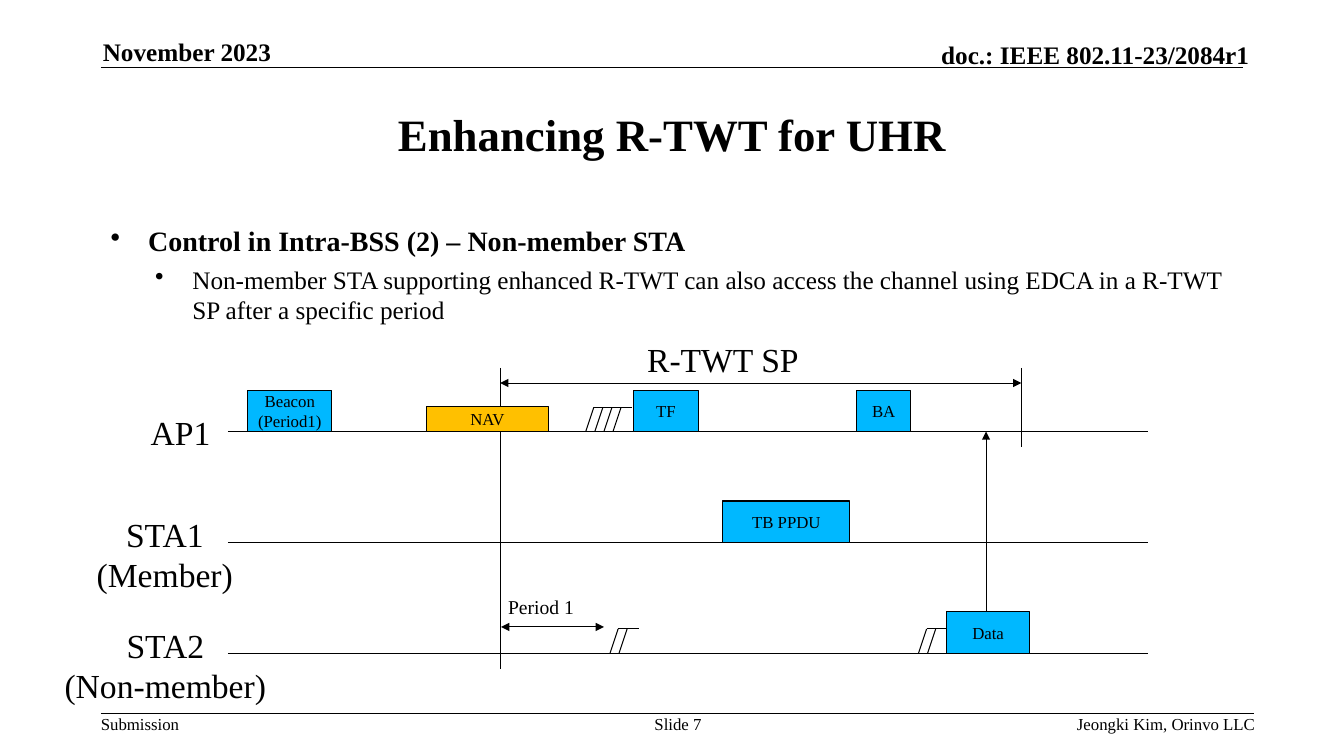
import pptx
import pptx.util
import pptx.dml.color
import pptx.enum.shapes
import pptx.enum.text
import pptx.oxml
import pptx.oxml.ns

PX = 9144  # EMU per px, 100 px to the inch
FONT = "Times New Roman"
BLACK = pptx.dml.color.RGBColor(0x00, 0x00, 0x00)
BLUE = pptx.dml.color.RGBColor(0x00, 0xB8, 0xFF)
AMBER = pptx.dml.color.RGBColor(0xFF, 0xC0, 0x00)
LEFT, CENTER, RIGHT = (pptx.enum.text.PP_ALIGN.LEFT, pptx.enum.text.PP_ALIGN.CENTER,
                       pptx.enum.text.PP_ALIGN.RIGHT)
TOP, MIDDLE, BOTTOM = (pptx.enum.text.MSO_ANCHOR.TOP, pptx.enum.text.MSO_ANCHOR.MIDDLE,
                       pptx.enum.text.MSO_ANCHOR.BOTTOM)


def px(*lengths):
    return [pptx.util.Emu(length * PX) for length in lengths]


def add_xml(parent, tag, **attributes):
    element = pptx.oxml.parse_xml(f"<a:{tag} {pptx.oxml.ns.nsdecls('a')}/>")
    for name, value in attributes.items():
        element.set(name, value)
    parent.append(element)


def write(shape, lines, size, align=LEFT, anchor=TOP, bold=False, wrap=True):
    frame = shape.text_frame
    frame.text = "\n".join(lines)
    frame.word_wrap = wrap
    frame.vertical_anchor = anchor
    for paragraph in frame.paragraphs:
        paragraph.alignment = align
        paragraph.font.name = FONT
        paragraph.font.size = pptx.util.Pt(size)
        paragraph.font.bold = bold
        paragraph.font.color.rgb = BLACK
    return frame


def add_text(slide, box, lines, size, inset=True, **style):
    shape = slide.shapes.add_textbox(*px(*box))
    frame = write(shape, lines, size, **style)
    if not inset:
        frame.margin_left = frame.margin_right = frame.margin_top = frame.margin_bottom = 0
    return frame


def add_line(slide, start, end, width=0.75, arrows=()):
    """Draw a line; arrows names the ends that carry a triangle."""
    line = slide.shapes.add_connector(pptx.enum.shapes.MSO_CONNECTOR.STRAIGHT,
                                      *px(*start, *end))
    line.line.color.rgb = BLACK
    line.line.width = pptx.util.Pt(width)
    for arrow in arrows:
        add_xml(line.line._get_or_add_ln(), arrow, type="triangle")
    add_xml(line._element.spPr, "effectLst")


def add_header(slide, box):
    left, top, width, height = box
    add_line(slide, (left, top + height), (left + width, top + height), 1)
    add_text(slide, (left + 2, top, 273, 30), ["November 2023"], 18,
             inset=False, anchor=BOTTOM, bold=True)
    add_text(slide, (left + 629, top + 3, 510, 30), ["doc.: IEEE 802.11-23/2084r1"], 18,
             inset=False, align=RIGHT, anchor=BOTTOM, bold=True)


def add_footer(slide, box):
    left, top, width, height = box
    add_line(slide, (left, top), (left + width, top), 1)
    for offset, part_width, text, align in (
            (0, 79, "Submission", LEFT),
            (534, 77, "Slide 7", CENTER),
            (681, 464, "Jeongki Kim, Orinvo LLC", RIGHT)):
        add_text(slide, (left + offset, top, part_width, height), [text], 12,
                 inset=False, align=align)


def set_title(slide, box):
    title = slide.shapes.title
    title.left, title.top, title.width, title.height = px(*box)
    write(title, ["Enhancing R-TWT for UHR"], 32, align=CENTER, anchor=MIDDLE, bold=True)


def add_bullets(slide, box):
    frame = add_text(slide, box, [
        "Control in Intra-BSS (2) – Non-member STA",
        "Non-member STA supporting enhanced R-TWT can also access the channel "
        "using EDCA in a R-TWT SP after a specific period"], 20)
    for paragraph, indent, size, space, bold in zip(
            frame.paragraphs, (37, 81), (20, 18), (6, 5), (True, False)):
        paragraph.font.size = pptx.util.Pt(size)
        paragraph.font.bold = bold
        paragraph.space_before = pptx.util.Pt(space)
        properties = paragraph._p.get_or_add_pPr()
        properties.set("marL", str(indent * PX))
        properties.set("indent", str(-37 * PX))
        bullet = pptx.oxml.parse_xml(f'<a:buChar {pptx.oxml.ns.nsdecls("a")} char="•"/>')
        properties.find(pptx.oxml.ns.qn("a:spcBef")).addnext(bullet)


def add_timing_diagram(slide, box):
    left, top, width, height = box
    rows = ap, member, non_member = [top + 97 + 110 * index for index in range(3)]
    sp_start, sp_end = left + 270, left + 787

    # Time axes and their stations
    for row in rows:
        add_line(slide, (left, row), (left + width, row))
    for offset, label_top, label_width, lines in (
            (-87, ap - 24, 80, ["AP1"]),
            (-144, member - 33, 163, ["STA1", "(Member)"]),
            (-172, non_member - 33, 220, ["STA2", "(Non-member)"])):
        add_text(slide, (left + offset, label_top, label_width, 50 * len(lines)),
                 lines, 24, align=CENTER)

    # Service period and first period
    add_line(slide, (sp_start, top + 34), (sp_start, top + height))
    add_line(slide, (sp_end, top + 34), (sp_end, top + 112))
    add_line(slide, (sp_start, top + 49), (sp_end, top + 49), arrows=("headEnd", "tailEnd"))
    add_text(slide, (left + 406, top, 172, 50), ["R-TWT SP"], 24, wrap=False)
    period_y = non_member - 26
    add_line(slide, (sp_start + 1, period_y), (sp_start + 103, period_y),
             arrows=("headEnd", "tailEnd"))
    add_text(slide, (left + 268, period_y - 37, 112, 34), ["Period 1"], 14)

    # Backoff slots: slanted strokes under a bar
    for offset, count, bar_end, row in (
            (355, 4, 401, ap), (379, 2, 408, non_member), (685, 2, 715, non_member)):
        for slot in range(count):
            foot = left + offset + 9 * slot
            add_line(slide, (foot + 8, row - 24), (foot, row))
        add_line(slide, (left + offset + 8, row - 24), (left + bar_end, row - 24))

    # Frames standing on the axes
    for offset, row, frame_width, frame_height, color, lines in (
            (197, ap, 121, 25, AMBER, ["NAV"]),
            (402, ap, 65, 41, BLUE, ["TF"]),
            (491, member, 126, 41, BLUE, ["TB PPDU"]),
            (624, ap, 53, 41, BLUE, ["BA"]),
            (20, ap, 83, 41, BLUE, ["Beacon", "(Period1)"]),
            (713, non_member, 82, 41, BLUE, ["Data"])):
        shape = slide.shapes.add_shape(
            pptx.enum.shapes.MSO_SHAPE.RECTANGLE,
            *px(left + offset, row - frame_height, frame_width, frame_height))
        shape.shadow.inherit = False
        shape.fill.solid()
        shape.fill.fore_color.rgb = color
        shape.line.color.rgb = BLACK
        shape.line.width = pptx.util.Pt(0.75)
        write(shape, lines, 12, align=CENTER, anchor=MIDDLE)

    # Data sent up to the AP
    add_line(slide, (left + 752, non_member - 41), (left + 752, ap), arrows=("tailEnd",))


def main():
    presentation = pptx.Presentation()
    presentation.slide_width, presentation.slide_height = px(1333, 750)
    slide = presentation.slides.add_slide(presentation.slide_layouts.get_by_name("Title Only"))
    add_header(slide, (100, 36, 1133, 31))
    add_footer(slide, (100, 708, 1144, 20))
    set_title(slide, (100, 75, 1133, 116))
    add_bullets(slide, (100, 217, 1133, 110))
    add_timing_diagram(slide, (226, 331, 913, 333))
    presentation.save("out.pptx")


if __name__ == "__main__":
    main()
